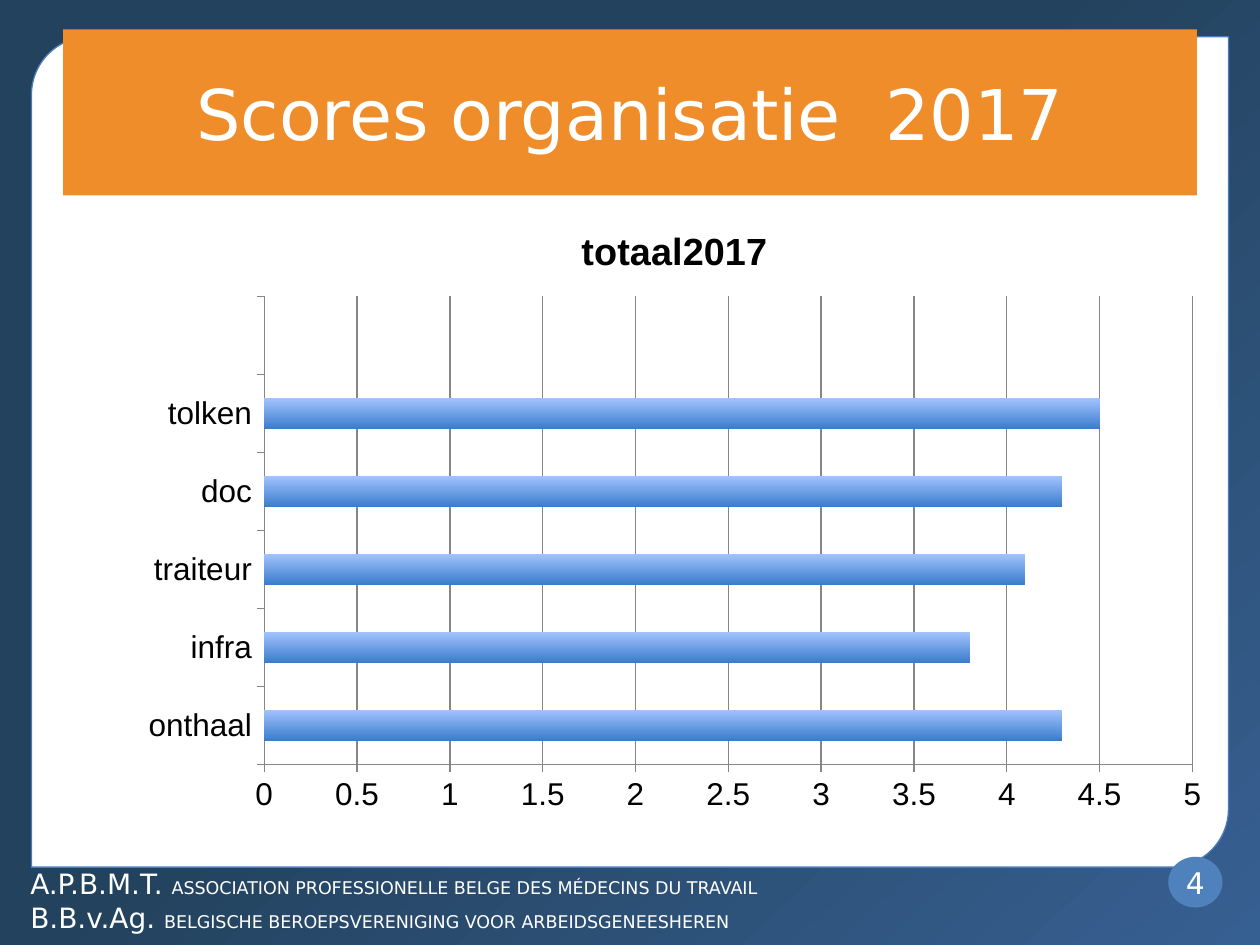
from lxml import etree
from pptx import Presentation
from pptx.chart.data import CategoryChartData
from pptx.dml.color import RGBColor
from pptx.enum.chart import XL_CHART_TYPE, XL_TICK_MARK
from pptx.enum.shapes import MSO_SHAPE
from pptx.enum.text import MSO_ANCHOR, PP_ALIGN
from pptx.oxml import parse_xml
from pptx.oxml.ns import nsdecls, qn
from pptx.util import Pt

BARS = XL_CHART_TYPE.BAR_CLUSTERED
OUTSIDE = XL_TICK_MARK.OUTSIDE
PANEL_SHAPE, OVAL = MSO_SHAPE.ROUND_2_DIAG_RECTANGLE, MSO_SHAPE.OVAL
MIDDLE, CENTER = MSO_ANCHOR.MIDDLE, PP_ALIGN.CENTER

WHITE = RGBColor(0xFF, 0xFF, 0xFF)
BLACK = RGBColor(0, 0, 0)
NAVY = RGBColor(0x23, 0x42, 0x5D)
BLUE = RGBColor(0x37, 0x60, 0x92)
PANEL_LINE = RGBColor(0x4A, 0x7E, 0xBB)
ORANGE = RGBColor(0xEF, 0x8D, 0x2B)
BADGE_BLUE = RGBColor(0x4F, 0x81, 0xBD)
BAR_TOP = RGBColor(0xA3, 0xC4, 0xFF)
BAR_BOTTOM = RGBColor(0x3A, 0x7C, 0xCB)
GRID_GREY = RGBColor(0x86, 0x86, 0x86)
HEADING_FONT, CHART_FONT = "DejaVu Sans", "Arial"

TITLE = "Scores organisatie  2017"
CHART_TITLE = "totaal2017"
SCORES = [("onthaal", 4.3), ("infra", 3.8), ("traiteur", 4.1),
          ("doc", 4.3), ("tolken", 4.5), ("", 0)]
FOOTER = [
    ("A.P.B.M.T. ", "ASSOCIATION PROFESSIONELLE BELGE DES MÉDECINS DU TRAVAIL"),
    ("B.B.v.Ag. ", "BELGISCHE BEROEPSVERENIGING VOOR ARBEIDSGENEESHEREN"),
]
PAGE = "4"

# left, top, width, height in points
PANEL_BOX = (18, 21, 684, 474.5)
TITLE_BOX = (36, 16.8, 648, 94.8)
CHART_BOX = (72, 114.5, 627, 356.5)
FOOTER_BOX = (13.7, 491.8, 461.5, 46)
BADGE_BOX = (667.6, 489.6, 31, 29)
PLOT_LAYOUT = {"x": 0.126, "y": 0.154, "w": 0.846, "h": 0.75}


def points(box):
    return [Pt(value) for value in box]


def set_gradient(fill, stops, angle):
    fill.gradient()
    fill.gradient_angle = angle
    for stop, (position, color) in zip(fill.gradient_stops, stops):
        stop.position = position
        stop.color.rgb = color


def set_margins(frame, side, top):
    frame.margin_left = frame.margin_right = Pt(side)
    frame.margin_top = frame.margin_bottom = Pt(top)


def add_run(paragraph, text, size):
    run = paragraph.add_run()
    run.text = text
    run.font.size = Pt(size)
    run.font.name = HEADING_FONT
    run.font.color.rgb = WHITE


def add_panel(slide):
    panel = slide.shapes.add_shape(PANEL_SHAPE, *points(PANEL_BOX))
    panel.adjustments[0] = 0.07
    panel.shadow.inherit = False
    panel.fill.solid()
    panel.fill.fore_color.rgb = WHITE
    panel.line.color.rgb = PANEL_LINE
    panel.line.width = Pt(0.75)
    slide.shapes.title.element.addprevious(panel.element)


def format_title(title):
    title.left, title.top, title.width, title.height = points(TITLE_BOX)
    title.fill.solid()
    title.fill.fore_color.rgb = ORANGE
    frame = title.text_frame
    frame.word_wrap = True
    frame.vertical_anchor = MIDDLE
    set_margins(frame, 3.6, 1.4)
    frame.paragraphs[0].alignment = CENTER
    add_run(frame.paragraphs[0], TITLE, 40)


def fix_plot_area(chart):
    """Give the inner plot area a fixed place within the chart."""
    plot_area = chart.element.find(".//" + qn("c:plotArea"))
    for old in plot_area.findall(qn("c:layout")):
        plot_area.remove(old)
    layout = parse_xml(f"<c:layout {nsdecls('c')}><c:manualLayout/></c:layout>")
    settings = {"layoutTarget": "inner", "xMode": "edge", "yMode": "edge", **PLOT_LAYOUT}
    for tag, value in settings.items():
        etree.SubElement(layout[0], qn("c:" + tag)).set("val", str(value))
    plot_area.insert(0, layout)


def add_scores_chart(slide):
    data = CategoryChartData()
    data.categories = [name for name, _ in SCORES]
    data.add_series(CHART_TITLE, [score for _, score in SCORES])
    chart = slide.shapes.add_chart(BARS, *points(CHART_BOX), data).chart
    chart.has_legend = False
    chart.font.name = CHART_FONT
    chart.font.size = Pt(18)
    chart.font.color.rgb = BLACK

    chart.has_title = True
    heading = chart.chart_title.text_frame.paragraphs[0].add_run()
    heading.text = CHART_TITLE
    heading.font.name = CHART_FONT
    heading.font.size = Pt(21.6)
    heading.font.bold = True
    heading.font.color.rgb = BLACK

    score_axis = chart.value_axis
    score_axis.minimum_scale, score_axis.maximum_scale = 0, 5
    score_axis.major_unit = 0.5
    score_axis.has_major_gridlines = True
    score_axis.tick_labels.number_format = "General"
    score_axis.tick_labels.number_format_is_linked = False
    for axis in (chart.category_axis, score_axis):
        axis.major_tick_mark = OUTSIDE
        axis.format.line.color.rgb = GRID_GREY
        axis.format.line.width = Pt(0.75)
    score_axis.major_gridlines.format.line.color.rgb = GRID_GREY
    score_axis.major_gridlines.format.line.width = Pt(0.75)

    plot = chart.plots[0]
    plot.gap_width = 150
    plot.vary_by_categories = False
    set_gradient(plot.series[0].format.fill, [(0, BAR_TOP), (1, BAR_BOTTOM)], 270)
    fix_plot_area(chart)


def add_footer(slide):
    frame = slide.shapes.add_textbox(*points(FOOTER_BOX)).text_frame
    frame.word_wrap = True
    set_margins(frame, 3.6, 3.6)
    paragraph = frame.paragraphs[0]
    for row, (initials, full_name) in enumerate(FOOTER):
        if row:
            paragraph.add_line_break()
        add_run(paragraph, initials, 16)
        add_run(paragraph, full_name, 10)


def add_page_badge(slide):
    badge = slide.shapes.add_shape(OVAL, *points(BADGE_BOX))
    badge.shadow.inherit = False
    badge.fill.solid()
    badge.fill.fore_color.rgb = BADGE_BLUE
    badge.line.fill.background()
    frame = badge.text_frame
    frame.word_wrap = False
    frame.vertical_anchor = MIDDLE
    set_margins(frame, 0, 0)
    frame.paragraphs[0].alignment = CENTER
    add_run(frame.paragraphs[0], PAGE, 17)


def main():
    deck = Presentation()
    deck.slide_width, deck.slide_height = Pt(720), Pt(540)
    slide = deck.slides.add_slide(deck.slide_layouts[5])
    set_gradient(slide.background.fill, [(0.46, NAVY), (1, BLUE)], 313)
    add_panel(slide)
    format_title(slide.shapes.title)
    add_scores_chart(slide)
    add_footer(slide)
    add_page_badge(slide)
    deck.save("out.pptx")


if __name__ == "__main__":
    main()
